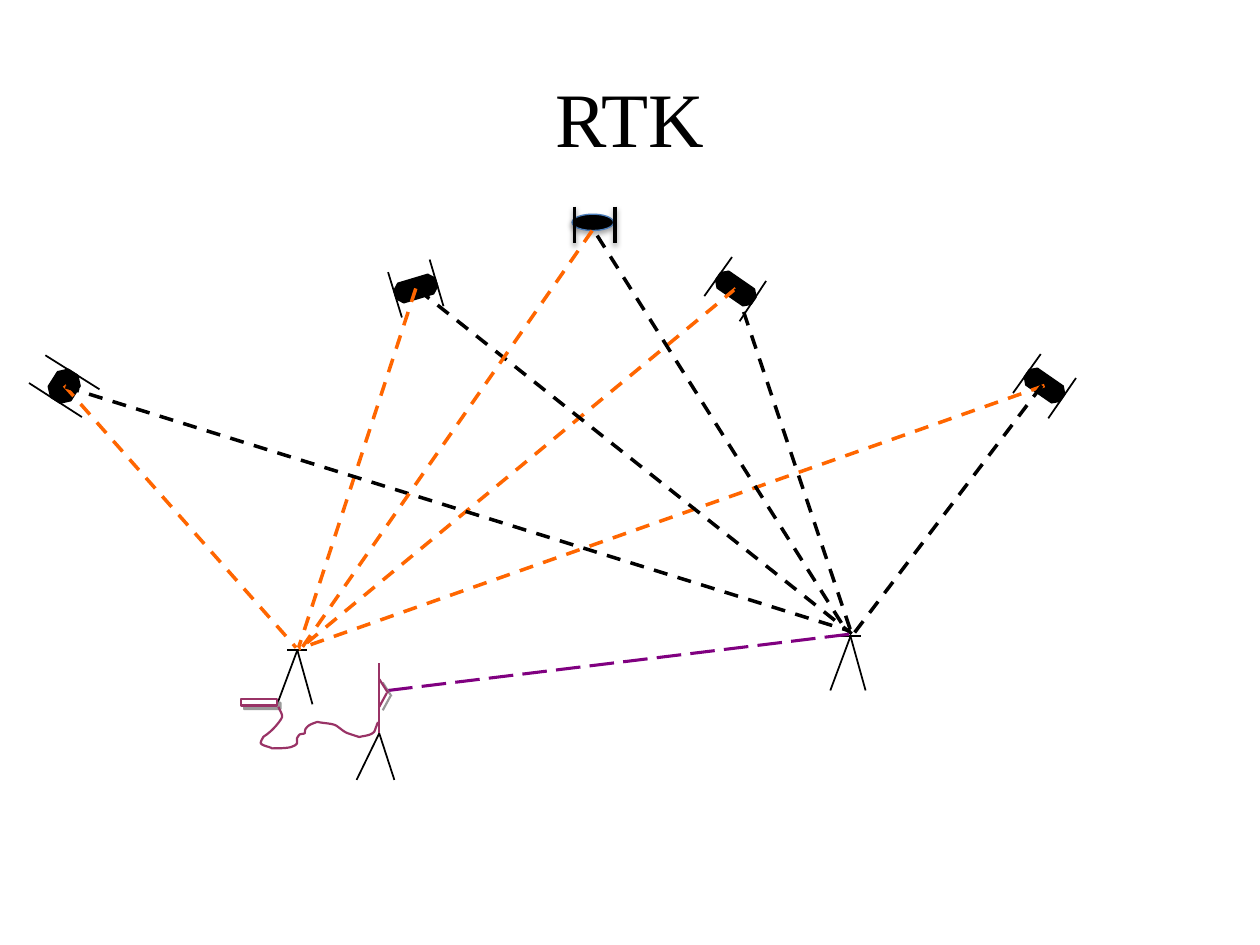
"""Build the RTK slide: satellites, two receivers and a radio link."""
from lxml.etree import SubElement
from pptx import Presentation
from pptx.dml.color import RGBColor
from pptx.enum.dml import MSO_LINE
from pptx.enum.shapes import MSO_CONNECTOR, MSO_SHAPE
from pptx.enum.text import MSO_ANCHOR, PP_ALIGN
from pptx.oxml.ns import qn
from pptx.util import Inches, Pt

HUE = {"black": "000000", "white": "FFFFFF", "orange": "FF6600",
       "purple": "800080", "plum": "993366", "blue": "4B7EBC", "grey": "808080"}
DROP = ("grey", 80, 0, 2.8, 45)
SOFT = ("black", 38, 3.1, 1.6, 90)


def style(item, hue, width, dash=None, shade=None):
    item.line.color.rgb = RGBColor.from_string(HUE[hue])
    item.line.width = Pt(width)
    if dash:
        item.line.dash_style = dash
    effect = SubElement(item._element.spPr, qn("a:effectLst"))
    if shade:
        tint, alpha, blur, dist, angle = shade
        outer = SubElement(effect, qn("a:outerShdw"), blurRad=str(Pt(blur)),
                           dist=str(Pt(dist)), dir=str(angle * 60000),
                           algn="ctr", rotWithShape="0")
        color = SubElement(outer, qn("a:srgbClr"), val=HUE[tint])
        SubElement(color, qn("a:alpha"), val=str(alpha * 1000))


def draw(start, end, hue="black", width=1, dash=None, shade=None):
    ends = [Inches(n) for n in (*start, *end)]
    line = slide.shapes.add_connector(MSO_CONNECTOR.STRAIGHT, *ends)
    style(line, hue, width, dash, shade)


deck = Presentation()
deck.slide_width, deck.slide_height = Inches(10), Inches(7.5)
slide = deck.slides.add_slide(deck.slide_layouts[5])

title = slide.shapes.title
place = {"left": 0.5, "top": 0.3, "width": 9, "height": 1.25}
for name, value in place.items():
    setattr(title, name, Inches(value))
title.text_frame.text = "RTK"
title.text_frame.vertical_anchor = MSO_ANCHOR.MIDDLE
head = title.text_frame.paragraphs[0]
head.alignment = PP_ALIGN.CENTER
for name, value in {"size": Pt(44), "name": "Times New Roman"}.items():
    setattr(head.font, name, value)
head.font.color.rgb = RGBColor.from_string(HUE["black"])

sats = [
    ((3.13, 2.21, 0.34, 0.16), 343.3,
     [((3.41, 2.06), (3.52, 2.43)), ((3.08, 2.16), (3.19, 2.52))]),
    ((0.38, 2.96, 0.26, 0.21), 302.4,
     [((0.36, 2.82), (0.79, 3.09)), ((0.23, 3.04), (0.65, 3.31))]),
    ((5.67, 2.21, 0.34, 0.16), 34.7,
     [((6.08, 2.23), (5.87, 2.55)), ((5.81, 2.04), (5.59, 2.35))]),
    ((8.12, 2.98, 0.34, 0.16), 34.7,
     [((8.54, 3.0), (8.32, 3.32)), ((8.26, 2.81), (8.04, 3.12))]),
]
for box, turn, wings in sats:
    body = slide.shapes.add_shape(MSO_SHAPE.OCTAGON, *map(Inches, box))
    body.rotation = turn
    body.fill.solid()
    body.fill.fore_color.rgb = RGBColor.from_string(HUE["black"])
    style(body, "black", 1)
    for start, end in wings:
        draw(start, end)

for x, y in [(2.36, 5.16), (6.75, 5.05)]:
    draw((x, y), (x - 0.16, y + 0.43))
    draw((x, y), (x + 0.12, y + 0.43))
    draw((x - 0.08, y), (x + 0.08, y))

rays = [
    ((8.29, 3.06), (2.37, 5.15), (8.27, 3.06), (6.76, 5.05)),
    ((5.84, 2.29), (2.39, 5.14), (5.84, 2.29), (6.77, 5.06)),
    ((3.3, 2.29), (2.37, 5.14), (3.32, 2.3), (6.76, 5.03)),
    ((0.51, 3.06), (2.35, 5.14), (0.52, 3.07), (6.75, 5.01)),
]
for sat, rover, twin, base in rays:
    draw(sat, rover, "orange", 2, MSO_LINE.DASH)
    draw(twin, base, "black", 2, MSO_LINE.DASH)
draw((3.08, 5.48), (6.77, 5.03), "purple", 1.75, MSO_LINE.LONG_DASH)

mast = (3.01, 5.82)
draw(mast, (2.83, 6.19))
draw(mast, (3.13, 6.19))
draw(mast, (3.01, 5.26), "plum", 1.25)
draw((3.01, 5.39), (3.08, 5.5), "plum", 1.25, shade=DROP)
draw((3.07, 5.5), (3.01, 5.61), "plum", 1.25, shade=DROP)

radio = slide.shapes.add_shape(
    MSO_SHAPE.RECTANGLE, Inches(1.91), Inches(5.55), Inches(0.29), Inches(0.05))
radio.fill.solid()
radio.fill.fore_color.rgb = RGBColor.from_string(HUE["white"])
style(radio, "plum", 1.25, shade=DROP)

curves = [
    (2.22, 5.64, 2.24, 5.66, 2.24, 5.69), (2.23, 5.72, 2.17, 5.79, 2.13, 5.82),
    (2.12, 5.83, 2.1, 5.84, 2.09, 5.85), (2.08, 5.87, 2.07, 5.88, 2.07, 5.9),
    (2.08, 5.92, 2.15, 5.93, 2.16, 5.94), (2.21, 5.94, 2.27, 5.94, 2.31, 5.93),
    (2.4, 5.9, 2.33, 5.88, 2.37, 5.84), (2.38, 5.82, 2.4, 5.83, 2.42, 5.82),
    (2.42, 5.81, 2.42, 5.79, 2.43, 5.78), (2.45, 5.75, 2.49, 5.74, 2.52, 5.73),
    (2.55, 5.74, 2.64, 5.74, 2.67, 5.76), (2.7, 5.78, 2.73, 5.81, 2.76, 5.82),
    (2.76, 5.82, 2.85, 5.85, 2.85, 5.85), (2.89, 5.84, 2.94, 5.84, 2.97, 5.81),
    (2.98, 5.79, 2.98, 5.78, 2.99, 5.76), (2.99, 5.75, 3.0, 5.74, 3.0, 5.73),
]
last = (2.21, 5.61)
pen = slide.shapes.build_freeform(*map(Inches, last))
steps = 6
for curve in curves:
    knots = [last, curve[:2], curve[2:4], curve[4:]]
    dots = []
    for step in range(1, steps + 1):
        t = step / steps
        parts = ((1 - t) ** 3, 3 * t * (1 - t) ** 2, 3 * t * t * (1 - t), t ** 3)
        dots.append([Inches(sum(w * k[axis] for w, k in zip(parts, knots)))
                     for axis in (0, 1)])
    pen.add_line_segments(dots, close=False)
    last = curve[4:]
cable = pen.convert_to_shape()
cable.fill.background()
style(cable, "plum", 1.25)

top = slide.shapes.add_shape(
    MSO_SHAPE.OVAL, Inches(4.54), Inches(1.7), Inches(0.33), Inches(0.13))
top.fill.solid()
top.fill.fore_color.rgb = RGBColor.from_string(HUE["black"])
style(top, "blue", 0.75, shade=("black", 35, 3.1, 1.8, 90))
for x in (4.88, 4.56):
    draw((x, 1.64), (x, 1.93), "black", 2, shade=SOFT)
draw((4.7, 1.83), (2.39, 5.15), "orange", 2, MSO_LINE.DASH)
draw((4.74, 1.87), (6.72, 5.01), "black", 2, MSO_LINE.DASH)

deck.save("out.pptx")
